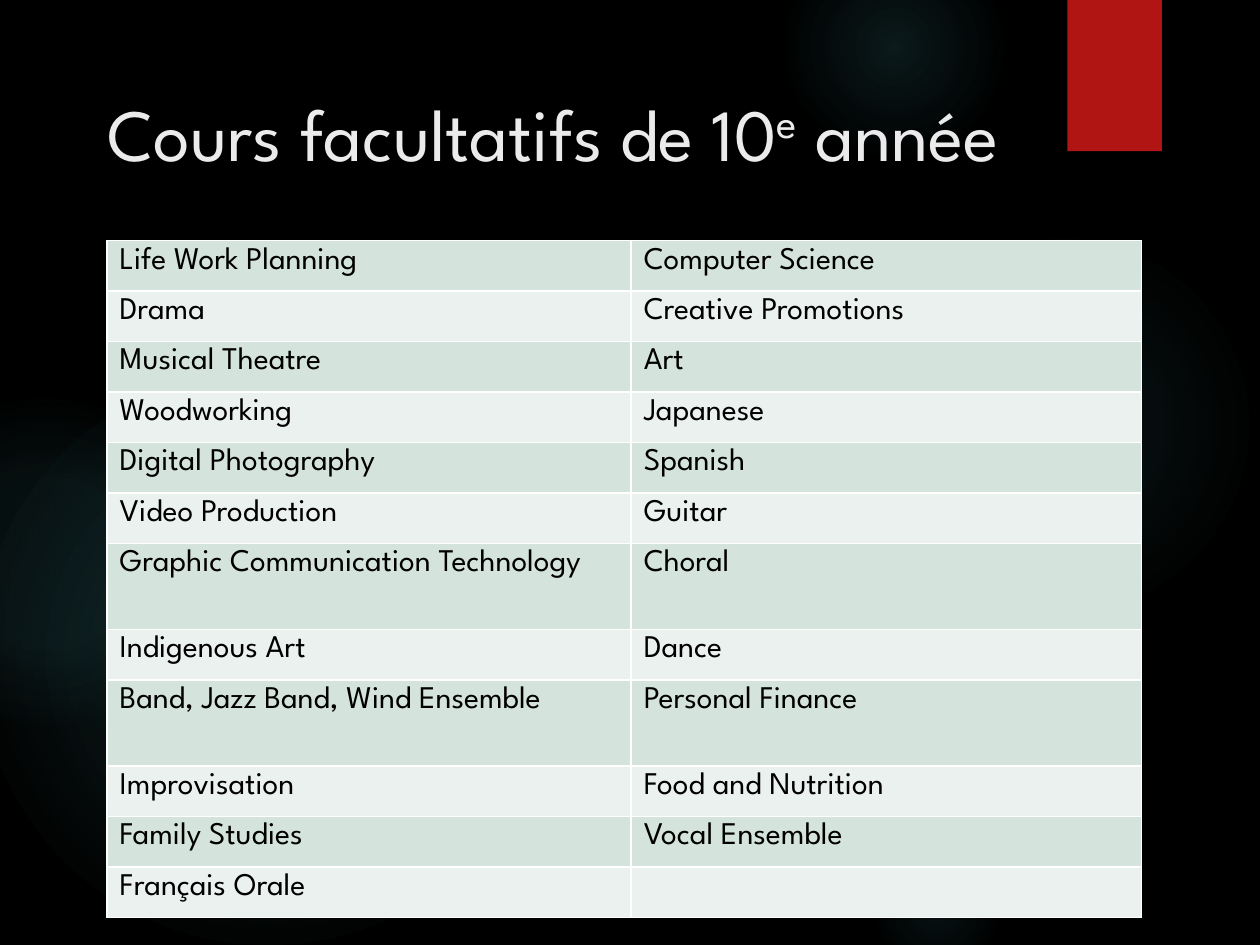
from lxml import etree
from pptx import Presentation
from pptx import util as u
from pptx.dml.color import RGBColor
from pptx.enum import shapes, text
from pptx.oxml import parse_xml
from pptx.oxml.ns import nsdecls, qn

COLORS = {
    "background": "000000", "glow": "50B9C1", "ribbon": "B01513",
    "title": "EBEBEB", "cell_text": "000000", "border": "FFFFFF",
    "band_dark": "D4E3DB", "band_light": "EBF1EE",
}

# left, top, diameter, then (position %, opacity %) stops
GLOWS = [
    (496, 132, 222, [(0, 7), (36, 6), (69, 0)]),
    (448, -36, 126, [(0, 14), (36, 7), (73, 0)]),
    (496, 480, 78, [(0, 9), (36, 5), (66, 0)]),
    (-12, 210, 330, [(0, 11), (36, 10), (75, 0)]),
    (-66, 228, 186, [(0, 8), (36, 8), (72, 0)]),
]

COURSES = [
    ("Life Work Planning", "Computer Science"),
    ("Drama", "Creative Promotions"),
    ("Musical Theatre", "Art"),
    ("Woodworking", "Japanese"),
    ("Digital Photography", "Spanish"),
    ("Video Production", "Guitar"),
    ("Graphic Communication Technology", "Choral"),
    ("Indigenous Art", "Dance"),
    ("Band, Jazz Band, Wind Ensemble", "Personal Finance"),
    ("Improvisation", "Food and Nutrition"),
    ("Family Studies", "Vocal Ensemble"),
    ("Français Orale", ""),
]
ROW_HEIGHT, TALL_ROW_HEIGHT = 28.2, 49.2
TALL_ROWS = {6, 8}


def rgb(name):
    return RGBColor.from_string(COLORS[name])


class SlideBuilder:
    font_name = "League Spartan"

    def __init__(self, slide):
        self.slide = slide
        fill = slide.background.fill
        fill.solid()
        fill.fore_color.rgb = rgb("background")

    def style_font(self, paragraph, size, color):
        font = paragraph.font
        font.name, font.size = self.font_name, u.Pt(size)
        font.color.rgb = rgb(color)

    def shape(self, kind, left, top, width, height):
        shape = self.slide.shapes.add_shape(
            kind, u.Pt(left), u.Pt(top), u.Pt(width), u.Pt(height))
        shape.shadow.inherit = False
        shape.line.fill.background()
        return shape

    def glow(self, left, top, diameter, stops):
        shape = self.shape(shapes.MSO_SHAPE.OVAL, left, top, diameter, diameter)
        shape.fill.background()
        stop_xml = "".join(
            f'<a:gs pos="{position * 1000}"><a:srgbClr val="{COLORS["glow"]}">'
            f'<a:alpha val="{opacity * 1000}"/></a:srgbClr></a:gs>'
            for position, opacity in stops)
        gradient = parse_xml(
            f'<a:gradFill {nsdecls("a")} rotWithShape="1"><a:gsLst>{stop_xml}</a:gsLst>'
            '<a:path path="circle"><a:fillToRect l="50000" t="50000" r="50000" b="50000"/>'
            '</a:path></a:gradFill>')
        properties = shape.element.spPr
        properties.replace(properties.find(qn("a:noFill")), gradient)

    def ribbon(self, left, top, width, height):
        shape = self.shape(shapes.MSO_SHAPE.RECTANGLE, left, top, width, height)
        shape.fill.solid()
        shape.fill.fore_color.rgb = rgb("ribbon")
        shape.element.spPr.find(qn("a:effectLst")).append(parse_xml(
            f'<a:outerShdw {nsdecls("a")} blurRad="{u.Pt(3)}" dist="{u.Pt(2)}" dir="5400000">'
            '<a:srgbClr val="000000"><a:alpha val="45000"/></a:srgbClr></a:outerShdw>'))

    def title(self, left, top, width, height, parts):
        box = self.slide.shapes.add_textbox(
            u.Pt(left), u.Pt(top), u.Pt(width), u.Pt(height))
        frame = box.text_frame
        frame.word_wrap = True
        frame.vertical_anchor = text.MSO_ANCHOR.TOP
        frame.margin_top = u.Pt(14)
        paragraph = frame.paragraphs[0]
        paragraph.alignment = text.PP_ALIGN.CENTER
        self.style_font(paragraph, 42, "title")
        for wording, baseline in parts:
            run = paragraph.add_run()
            run.text = wording
            if baseline:
                run.font._element.set("baseline", str(baseline * 1000))

    def cell(self, cell, wording, fill):
        cell.text = wording
        cell.fill.solid()
        cell.fill.fore_color.rgb = rgb(fill)
        self.style_font(cell.text_frame.paragraphs[0], 18, "cell_text")
        properties = cell._tc.get_or_add_tcPr()
        for index, side in enumerate(("lnL", "lnR", "lnT", "lnB")):
            border = etree.Element(qn(f"a:{side}"), w=str(u.Pt(1)))
            solid = etree.SubElement(border, qn("a:solidFill"))
            etree.SubElement(solid, qn("a:srgbClr"), val=COLORS["border"])
            properties.insert(index, border)

    def table(self, left, top, column_widths, row_heights, rows):
        table = self.slide.shapes.add_table(
            len(rows), len(column_widths), u.Pt(left), u.Pt(top),
            u.Pt(sum(column_widths)), u.Pt(sum(row_heights))).table
        for column, width in zip(table.columns, column_widths):
            column.width = u.Pt(width)
        for index, (row, height, wordings) in enumerate(
                zip(table.rows, row_heights, rows)):
            row.height = u.Pt(height)
            fill = "band_light" if index % 2 else "band_dark"
            for cell, wording in zip(row.cells, wordings):
                self.cell(cell, wording, fill)


def main():
    presentation = Presentation()
    presentation.slide_width, presentation.slide_height = u.Pt(720), u.Pt(540)
    builder = SlideBuilder(
        presentation.slides.add_slide(presentation.slide_layouts[6]))

    # Background glows and ribbon
    for glow in GLOWS:
        builder.glow(*glow)
    builder.ribbon(610, 0, 54, 86.4)

    # Title
    builder.title(38, 36, 556, 110,
                  [("Cours facultatifs de 10", 0), ("e", 30), (" année", 0)])

    # Course table
    row_heights = [TALL_ROW_HEIGHT if index in TALL_ROWS else ROW_HEIGHT
                   for index in range(len(COURSES))]
    builder.table(61.2, 137.5, [299.5, 291.6], row_heights, COURSES)

    presentation.save("out.pptx")


if __name__ == "__main__":
    main()
